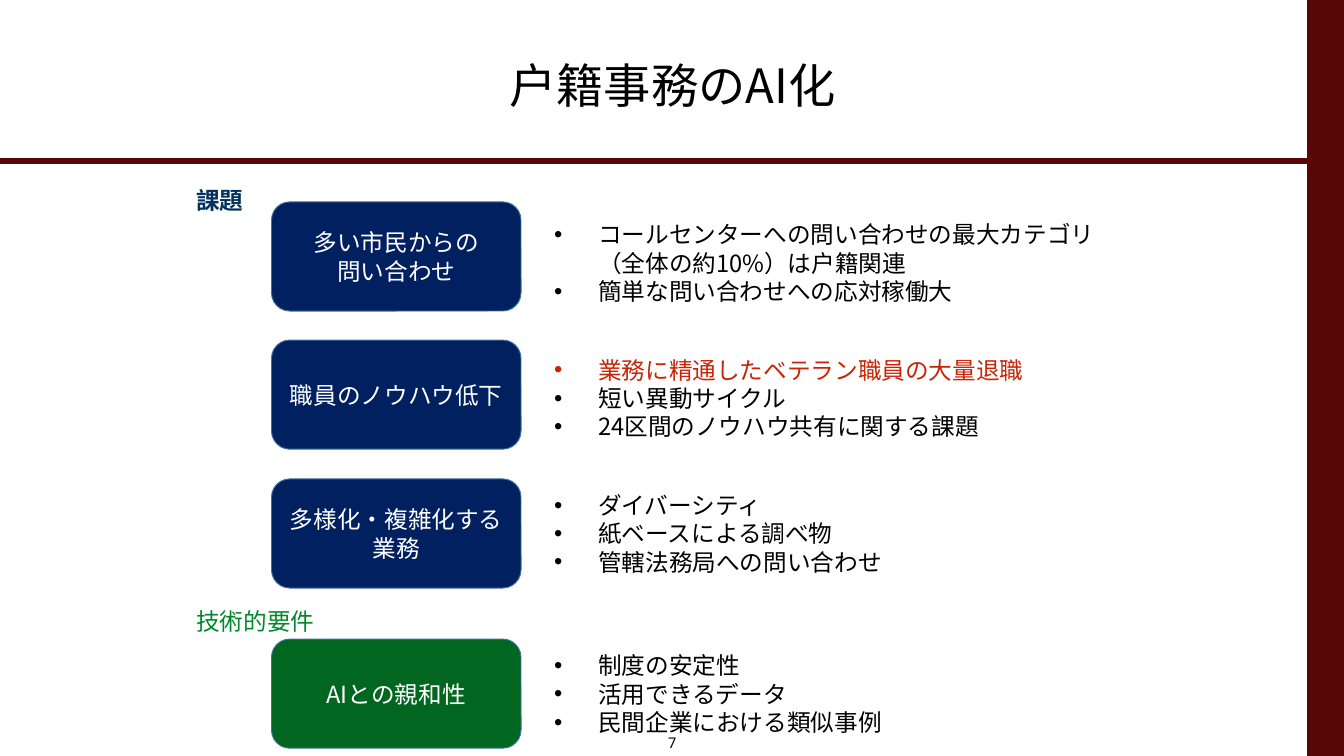
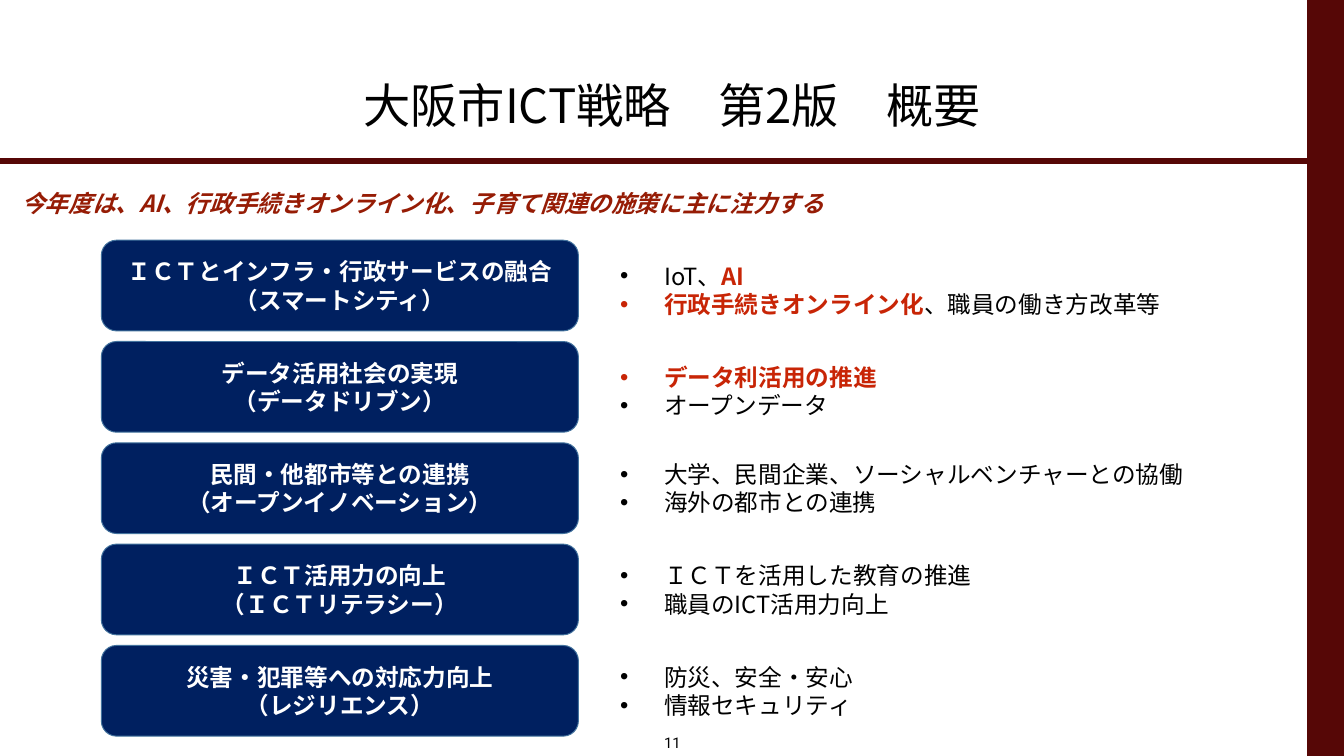
from lxml.etree import SubElement
from pptx import Presentation
from pptx.dml.color import RGBColor
from pptx.enum.shapes import MSO_CONNECTOR, MSO_SHAPE
from pptx.enum.text import MSO_ANCHOR, MSO_AUTO_SIZE, PP_ALIGN
from pptx.oxml.ns import qn
from pptx.util import Pt

PX = 9144  # EMU per px, 100 px to the inch
SLIDE_W, SLIDE_H = 1896, 1067
BAND_X, RULE_Y = 1844, 227
INDENT = 62
JP_FONT, NUMBER_FONT = "Noto Sans CJK JP", "Roboto"
TITLE_SIZE, TEXT_SIZE, NUMBER_SIZE = 48, 24, 15
LINE_PITCH = Pt(28.8)

BLACK = RGBColor(0x00, 0x00, 0x00)
WHITE = RGBColor(0xFF, 0xFF, 0xFF)
MAROON = RGBColor(0x56, 0x07, 0x06)
NAVY = RGBColor(0x00, 0x20, 0x60)
GREEN = RGBColor(0x00, 0x66, 0x20)
BOX_EDGE = RGBColor(0x43, 0x73, 0x9E)
RED = RGBColor(0xC8, 0x25, 0x06)
DARK_RED = RGBColor(0x96, 0x1C, 0x05)
LABEL_BLUE = RGBColor(0x01, 0x32, 0x60)
LABEL_GREEN = RGBColor(0x00, 0x88, 0x2B)

# Run styles: colour, bold, italic
PLAIN = (BLACK, False, False)
ALERT = (RED, False, False)
KEY = (RED, True, False)

# Rows: box top, list top, box fill, box text, bullets (each a list of runs)
SLIDES = [
    {
        "title": "戸籍事務のAI化", "title_at": (139, 1, 1619, 236), "number": "7",
        "box": (383, 352, 154), "box_bold": False, "list": (772, 838, 131),
        "labels": [
            ("課題", (267, 258, 116, 50), (LABEL_BLUE, True, False), 10),
            ("技術的要件", (267, 851, 211, 50), (LABEL_GREEN, False, False), 10),
        ],
        "rows": [
            (285, 306, NAVY, "多い市民からの\n問い合わせ", [
                [("コールセンターへの問い合わせの最大カテゴリ\n（全体の約10%）は戸籍関連", PLAIN)],
                [("簡単な問い合わせへの応対稼働大", PLAIN)]]),
            (480, 497, NAVY, "職員のノウハウ低下", [
                [("業務に精通したベテラン職員の大量退職", ALERT)],
                [("短い異動サイクル", PLAIN)],
                [("24区間のノウハウ共有に関する課題", PLAIN)]]),
            (676, 688, NAVY, "多様化・複雑化する業務", [
                [("ダイバーシティ", PLAIN)],
                [("紙ベースによる調べ物", PLAIN)],
                [("管轄法務局への問い合わせ", PLAIN)]]),
            (902, 914, GREEN, "AIとの親和性", [
                [("制度の安定性", PLAIN)],
                [("活用できるデータ", PLAIN)],
                [("民間企業における類似事例", PLAIN)]]),
        ],
    },
    {
        "title": "大阪市ICT戦略　第2版　概要", "title_at": (130, 45, 1636, 206), "number": "11",
        "box": (143, 673, 128), "box_bold": True, "list": (865, 838, 91),
        "labels": [
            ("今年度は、AI、行政手続きオンライン化、子育て関連の施策に主に注力する",
             (24, 261, 1826, 52), (DARK_RED, True, True), 6),
        ],
        "rows": [
            (339, 364, NAVY, "ＩＣＴとインフラ・行政サービスの融合\n（スマートシティ）", [
                [("IoT、", PLAIN), ("AI", KEY)],
                [("行政手続きオンライン化", KEY), ("、職員の働き方改革等", PLAIN)]]),
            (482, 507, NAVY, "データ活用社会の実現\n（データドリブン）", [
                [("データ利活用の推進", KEY)],
                [("オープンデータ", PLAIN)]]),
            (625, 644, NAVY, "民間・他都市等との連携\n（オープンイノベーション）", [
                [("大学、民間企業、ソーシャルベンチャーとの協働", PLAIN)],
                [("海外の都市との連携", PLAIN)]]),
            (768, 787, NAVY, "ＩＣＴ活用力の向上\n（ＩＣＴリテラシー）", [
                [("ＩＣＴを活用した教育の推進", PLAIN)],
                [("職員のICT活用力向上", PLAIN)]]),
            (911, 930, NAVY, "災害・犯罪等への対応力向上\n（レジリエンス）", [
                [("防災、安全・安心", PLAIN)],
                [("情報セキュリティ", PLAIN)]]),
        ],
    },
]


def emu(*lengths):
    return [n * PX for n in lengths]


def add_runs(p, runs, size=TEXT_SIZE, font=JP_FONT):
    for text, (color, bold, italic) in runs:
        for i, line in enumerate(text.split("\n")):
            if i:
                p.add_line_break()
            r = p.add_run()
            r.text = line
            r.font.size = Pt(size)
            r.font.bold, r.font.italic = bold, italic
            r.font.color.rgb = color
            r.font.name = font
            SubElement(r.font._element, qn("a:ea"), typeface=font)


def set_frame(tf, anchor, inset=None, wrap=True):
    tf.auto_size = MSO_AUTO_SIZE.NONE
    tf.word_wrap = wrap
    tf.vertical_anchor = anchor
    if inset is not None:
        tf.margin_left = tf.margin_right = tf.margin_top = tf.margin_bottom = inset * PX


def set_bullet(p):
    pPr = p._p.get_or_add_pPr()
    pPr.set("marL", str(INDENT * PX))
    pPr.set("indent", str(-INDENT * PX))
    SubElement(pPr, qn("a:buFont"), typeface="Arial")
    SubElement(pPr, qn("a:buChar"), char="•")


def add_text(s, at, runs, inset, align=PP_ALIGN.LEFT, wrap=True, **font):
    tf = s.shapes.add_textbox(*emu(*at)).text_frame
    set_frame(tf, MSO_ANCHOR.MIDDLE, inset, wrap)
    p = tf.paragraphs[0]
    p.alignment = align
    add_runs(p, runs, **font)


def add_box(s, at, fill, text, bold):
    sp = s.shapes.add_shape(MSO_SHAPE.ROUNDED_RECTANGLE, *emu(*at))
    sp.shadow.inherit = False
    sp.fill.solid()
    sp.fill.fore_color.rgb = fill
    sp.line.color.rgb = BOX_EDGE
    sp.line.width = Pt(1)
    set_frame(sp.text_frame, MSO_ANCHOR.MIDDLE)
    p = sp.text_frame.paragraphs[0]
    p.alignment = PP_ALIGN.CENTER
    p.line_spacing = LINE_PITCH
    add_runs(p, [(text, (WHITE, bold, False))])


def add_list(s, at, bullets):
    tf = s.shapes.add_textbox(*emu(*at)).text_frame
    set_frame(tf, MSO_ANCHOR.TOP)
    for i, runs in enumerate(bullets):
        p = tf.add_paragraph() if i else tf.paragraphs[0]
        set_bullet(p)
        p.line_spacing = LINE_PITCH
        add_runs(p, runs)


def decorate_layout(layout, s):
    """Draw the side band and title rule, then move them to the layout."""
    band = s.shapes.add_shape(MSO_SHAPE.RECTANGLE,
                              *emu(BAND_X, 0, SLIDE_W - BAND_X, SLIDE_H))
    band.shadow.inherit = False
    band.fill.solid()
    band.fill.fore_color.rgb = MAROON
    band.line.fill.background()
    rule = s.shapes.add_connector(MSO_CONNECTOR.STRAIGHT,
                                  *emu(-1, RULE_Y, BAND_X, RULE_Y))
    rule.line.color.rgb = MAROON
    rule.line.width = Pt(6)
    SubElement(rule._element.spPr, qn("a:effectLst"))
    for shape_id, sp in enumerate((band, rule), start=20):
        sp._element.xpath(".//p:cNvPr")[0].set("id", str(shape_id))
        layout.shapes.element.append(sp._element)


def add_title(s, text, at):
    title = s.shapes.title
    title.left, title.top, title.width, title.height = emu(*at)
    set_frame(title.text_frame, MSO_ANCHOR.MIDDLE, 6)
    p = title.text_frame.paragraphs[0]
    p.alignment = PP_ALIGN.CENTER
    add_runs(p, [(text, PLAIN)], size=TITLE_SIZE)


def main():
    prs = Presentation()
    prs.slide_width, prs.slide_height = emu(SLIDE_W, SLIDE_H)
    layout = prs.slide_layouts.get_by_name("Title Only")

    for n, content in enumerate(SLIDES):
        s = prs.slides.add_slide(layout)
        if n == 0:
            decorate_layout(layout, s)
        add_title(s, content["title"], content["title_at"])

        # Boxes with their lists
        box_x, box_w, box_h = content["box"]
        list_x, list_w, list_h = content["list"]
        for box_y, list_y, fill, text, bullets in content["rows"]:
            add_box(s, (box_x, box_y, box_w, box_h), fill, text, content["box_bold"])
            add_list(s, (list_x, list_y, list_w, list_h), bullets)

        # Labels and page number
        for text, at, style, inset in content["labels"]:
            add_text(s, at, [(text, style)], inset)
        add_text(s, (927, 1030, 43, 36), [(content["number"], PLAIN)], 6,
                 PP_ALIGN.CENTER, wrap=False, size=NUMBER_SIZE, font=NUMBER_FONT)

    prs.save("out.pptx")


if __name__ == "__main__":
    main()
